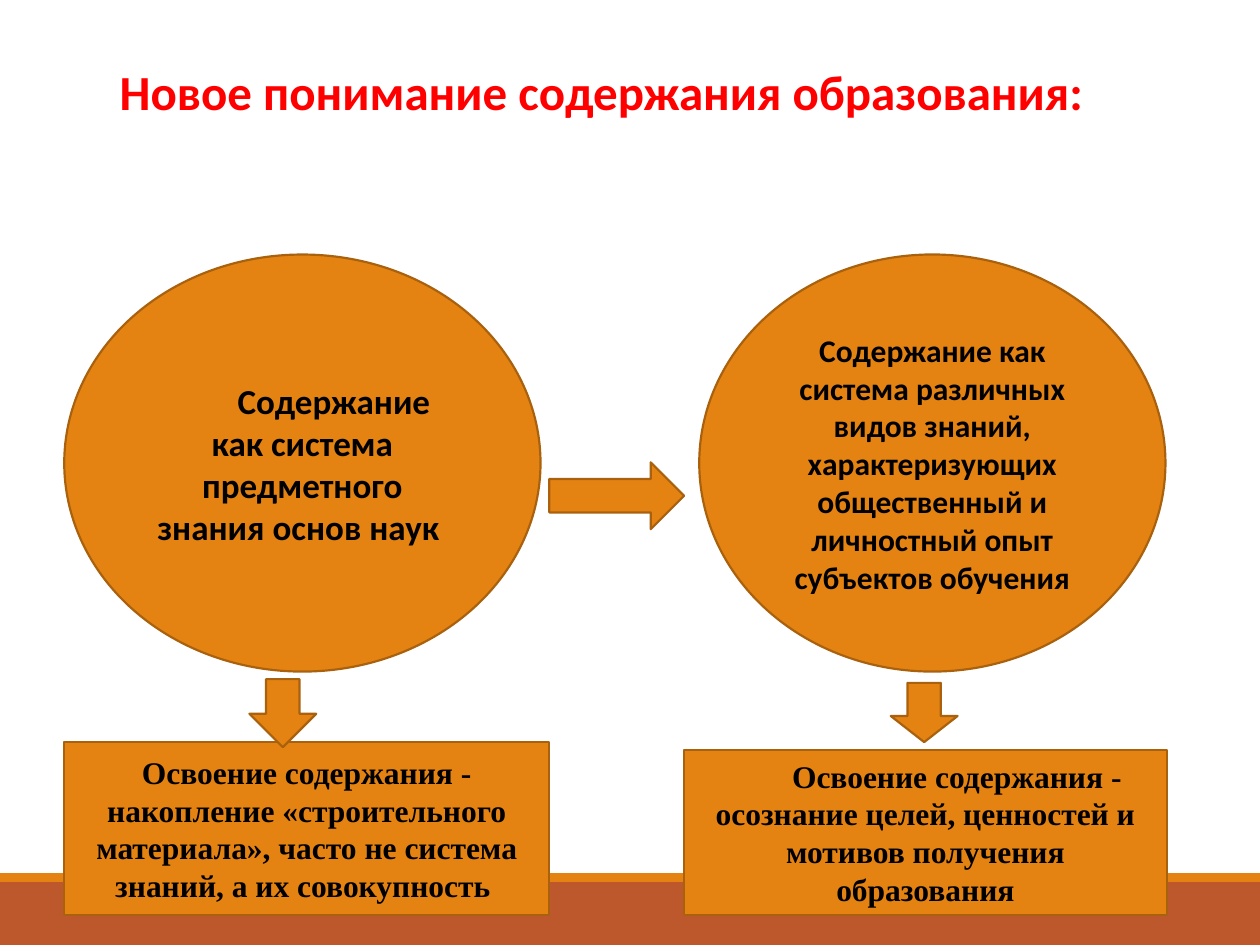
import dataclasses

import pptx
import pptx.dml.color
import pptx.enum.shapes
import pptx.enum.text
import pptx.util

Inches = pptx.util.Inches
Kind = pptx.enum.shapes.MSO_SHAPE
Align = pptx.enum.text.PP_ALIGN
Anchor = pptx.enum.text.MSO_ANCHOR


@dataclasses.dataclass(frozen=True)
class Theme:
    accent: str = "E48312"
    outline: str = "A9610D"
    footer: str = "BD582C"
    heading: str = "FF0000"
    ink: str = "000000"
    sans: str = "Calibri"
    serif: str = "Times New Roman"
    heading_size: int = 28
    large_size: int = 20
    body_size: int = 18
    line_width: float = 1.25
    first_indent: float = 0.5


class SlideBuilder:
    """Draw styled elements on the current slide."""

    def __init__(self, deck, theme):
        self.theme = theme
        self.page = deck.slides.add_slide(deck.slide_layouts[5])

    def color(self, value):
        return pptx.dml.color.RGBColor.from_string(value)

    def set_text(self, box, text, size, font, color, align, anchor, indented):
        frame = box.text_frame
        frame.text = text
        frame.word_wrap = True
        frame.auto_size = pptx.enum.text.MSO_AUTO_SIZE.NONE
        frame.vertical_anchor = anchor
        para = frame.paragraphs[0]
        para.alignment = align
        if indented:
            properties = para._p.get_or_add_pPr()
            properties.set("marL", "0")
            properties.set("indent", str(Inches(self.theme.first_indent)))
        for span in para.runs:
            span.font.name = font
            span.font.size = pptx.util.Pt(size)
            span.font.bold = True
            span.font.color.rgb = self.color(color)

    def title(self, text, left, top, width, height):
        box = self.page.shapes.title
        box.left, box.top = Inches(left), Inches(top)
        box.width, box.height = Inches(width), Inches(height)
        self.set_text(box, text, self.theme.heading_size, self.theme.sans,
                      self.theme.heading, Align.JUSTIFY, Anchor.TOP, True)

    def shape(self, kind, left, top, width, height, fill=None, outlined=True):
        box = self.page.shapes.add_shape(
            kind, Inches(left), Inches(top), Inches(width), Inches(height))
        box.shadow.inherit = False
        box.fill.solid()
        box.fill.fore_color.rgb = self.color(fill or self.theme.accent)
        if outlined:
            box.line.color.rgb = self.color(self.theme.outline)
            box.line.width = pptx.util.Pt(self.theme.line_width)
        else:
            box.line.fill.background()
        return box

    def band(self, top, height, fill):
        self.shape(Kind.RECTANGLE, 0, top, 10, height, fill, outlined=False)

    def label(self, kind, place, text, size, font, indented=False):
        box = self.shape(kind, *place)
        self.set_text(box, text, size, font, self.theme.ink,
                      Align.CENTER, Anchor.MIDDLE, indented)

    def arrow(self, kind, place, head=0.5):
        box = self.shape(kind, *place)
        box.adjustments[1] = head


def main():
    deck = pptx.Presentation()
    deck.slide_width, deck.slide_height = Inches(10), Inches(7.5)
    theme = Theme()
    slide = SlideBuilder(deck, theme)

    slide.band(7, 0.5, theme.footer)
    slide.band(6.93, 0.07, theme.accent)
    slide.title("Новое понимание содержания образования:", 0.35, 0.44, 9.06, 6.09)

    slide.label(Kind.OVAL, (0.51, 2.02, 3.78, 3.31),
                "Содержание как система предметного знания основ наук ",
                theme.large_size, theme.sans, indented=True)
    slide.label(Kind.OVAL, (5.55, 2.02, 3.7, 3.31),
                "Содержание как система различных видов знаний, характеризующих "
                "общественный и личностный опыт субъектов обучения",
                theme.body_size, theme.sans)
    slide.label(Kind.RECTANGLE, (5.43, 5.95, 3.83, 1.31),
                "Освоение содержания - осознание целей, ценностей и мотивов "
                "получения образования",
                theme.body_size, theme.serif, indented=True)
    slide.label(Kind.RECTANGLE, (0.51, 5.89, 3.85, 1.37),
                "Освоение содержания - накопление «строительного материала», "
                "часто не система знаний, а их совокупность ",
                theme.body_size, theme.serif)

    slide.arrow(Kind.RIGHT_ARROW, (4.36, 3.67, 1.07, 0.53))
    slide.arrow(Kind.DOWN_ARROW, (7.07, 5.42, 0.53, 0.47), head=0.44)
    slide.arrow(Kind.DOWN_ARROW, (1.98, 5.39, 0.53, 0.54))

    deck.save("out.pptx")


if __name__ == "__main__":
    main()
